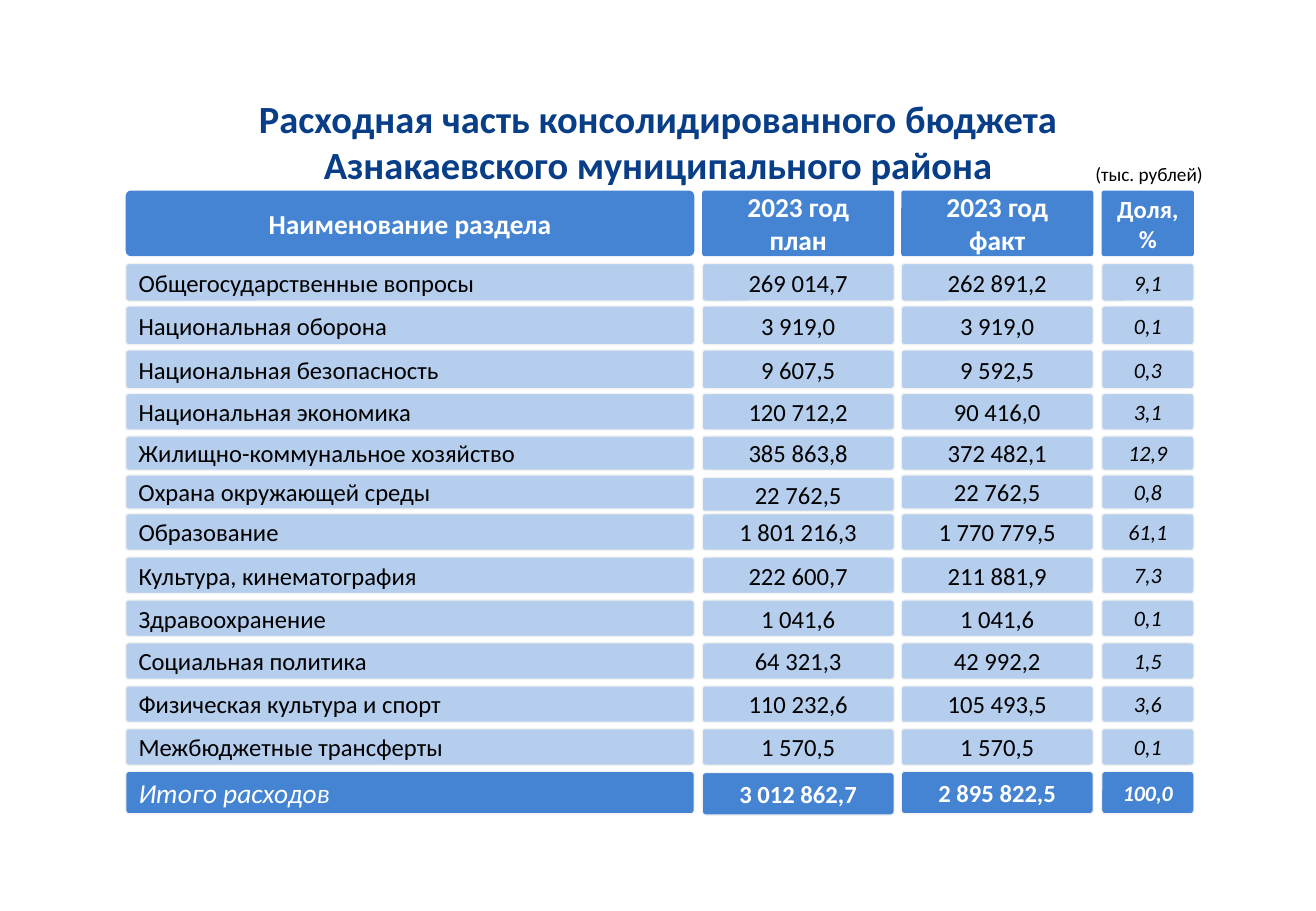
from pptx import Presentation
from pptx.dml.color import RGBColor
from pptx.enum.shapes import MSO_SHAPE
from pptx.enum.text import MSO_ANCHOR, MSO_AUTO_SIZE, PP_ALIGN
from pptx.util import Pt

# Columns: left, width
COLUMNS = [(74.5, 337), (416.2, 113.8), (534.2, 113.8), (653, 54.7)]
HEADERS = ["Наименование раздела", "2023 год\nплан", "2023 год\nфакт", "Доля, %"]
HEADER_SIZES = [16.2, 16.2, 16.2, 14.6]
BODY_SIZES = [14.6, 14.6, 14.6, 13]
TOTAL_SIZES = [16.2, 14.6, 14.6, 13]

# Rows: top, height, cell texts
ROWS = [
    (156.2, 22.3, ["Общегосударственные вопросы", "269 014,7", "262 891,2", "9,1"]),
    (181.4, 23, ["Национальная оборона", "3 919,0", "3 919,0", "0,1"]),
    (207.4, 23, ["Национальная безопасность", "9 607,5", "9 592,5", "0,3"]),
    (233.3, 21.6, ["Национальная экономика", "120 712,2", "90 416,0", "3,1"]),
    (258.5, 20.2, ["Жилищно-коммунальное хозяйство", "385 863,8", "372 482,1", "12,9"]),
    (281.5, 20.2, ["Охрана окружающей среды", "22 762,5", "22 762,5", "0,8"]),
    (304.6, 21.6, ["Образование", "1 801 216,3", "1 770 779,5", "61,1"]),
    (330.2, 21.6, ["Культура, кинематография", "222 600,7", "211 881,9", "7,3"]),
    (355.7, 21.6, ["Здравоохранение", "1 041,6", "1 041,6", "0,1"]),
    (381.1, 21.6, ["Социальная политика", "64 321,3", "42 992,2", "1,5"]),
    (406.6, 21.6, ["Физическая культура и спорт", "110 232,6", "105 493,5", "3,6"]),
    (432, 21.6, ["Межбюджетные трансферты", "1 570,5", "1 570,5", "0,1"]),
]
TOTAL = (457.2, 25.2, ["Итого расходов", "3 012 862,7", "2 895 822,5", "100,0"])
# Cells set slightly below their row
SHIFTS = {"Охрана окружающей среды": {1: 1.4}, "Итого расходов": {1: 0.7}}


def rgb(color):
    return RGBColor.from_string(color)


class BudgetSlide:
    FONT = "Calibri"
    DARK, LIGHT, BORDER = "4584D3", "B5CEED", "F2F2F2"
    NAVY, WHITE, BLACK = "073E87", "FFFFFF", "000000"

    def __init__(self, prs):
        self.s = prs.slides.add_slide(prs.slide_layouts[5])

    def set_text(self, tf, text, size, color, bold=False, italic=False,
                 align=PP_ALIGN.CENTER):
        tf.text = text
        for p in tf.paragraphs:
            p.alignment = align
            p.font.name, p.font.size = self.FONT, Pt(size)
            p.font.bold, p.font.italic = bold, italic
            p.font.color.rgb = rgb(color)

    def title(self, x, y, w, h, text):
        sp = self.s.shapes.title
        sp.left, sp.top, sp.width, sp.height = Pt(x), Pt(y), Pt(w), Pt(h)
        tf = sp.text_frame
        tf.word_wrap = False
        tf.auto_size = MSO_AUTO_SIZE.NONE
        tf.vertical_anchor = MSO_ANCHOR.TOP
        self.set_text(tf, text, 22.8, self.NAVY, bold=True)

    def label(self, x, y, w, h, text):
        tf = self.s.shapes.add_textbox(Pt(x), Pt(y), Pt(w), Pt(h)).text_frame
        tf.word_wrap = False
        tf.auto_size = MSO_AUTO_SIZE.SHAPE_TO_FIT_TEXT
        self.set_text(tf, text, 11.4, self.BLACK)

    def cell(self, x, y, w, h, text, size, fill, color, border=True,
             radius=0.083, **style):
        sp = self.s.shapes.add_shape(MSO_SHAPE.ROUNDED_RECTANGLE,
                                     Pt(x), Pt(y), Pt(w), Pt(h))
        sp.adjustments[0] = radius
        sp.shadow.inherit = False
        sp.fill.solid()
        sp.fill.fore_color.rgb = rgb(fill)
        if border:
            sp.line.color.rgb = rgb(self.BORDER)
            sp.line.width = Pt(0.75)
        else:
            sp.line.fill.background()
        tf = sp.text_frame
        tf.word_wrap = True
        tf.vertical_anchor = MSO_ANCHOR.MIDDLE
        self.set_text(tf, text, size, color, **style)

    def header(self, y, h):
        for i, (x, w) in enumerate(COLUMNS):
            self.cell(x, y, w, h, HEADERS[i], HEADER_SIZES[i], self.DARK, self.WHITE,
                      border=False, radius=0.04 if i else 0.083, bold=True)

    def row(self, y, h, texts, total=False):
        shifts = SHIFTS.get(texts[0], {})
        sizes = TOTAL_SIZES if total else BODY_SIZES
        fill, color = (self.DARK, self.WHITE) if total else (self.LIGHT, self.BLACK)
        for i, (x, w) in enumerate(COLUMNS):
            self.cell(x, y + shifts.get(i, 0), w, h, texts[i], sizes[i], fill, color,
                      bold=total and i > 0,
                      italic=i == 3 or (total and i == 0),
                      align=PP_ALIGN.CENTER if i else PP_ALIGN.LEFT)


def main():
    prs = Presentation()
    prs.slide_width, prs.slide_height = Pt(780), Pt(540)
    slide = BudgetSlide(prs)

    # Title
    slide.title(144.7, 52.6, 491, 62.6, "Расходная часть консолидированного бюджета\n"
                "Азнакаевского муниципального района")

    # Budget grid
    slide.header(113, 38.9)
    for y, h, texts in ROWS:
        slide.row(y, h, texts)
    slide.row(*TOTAL, total=True)

    # Unit note
    slide.label(641.5, 92.9, 79.2, 20.9, "(тыс. рублей)")

    prs.save("out.pptx")


if __name__ == "__main__":
    main()
